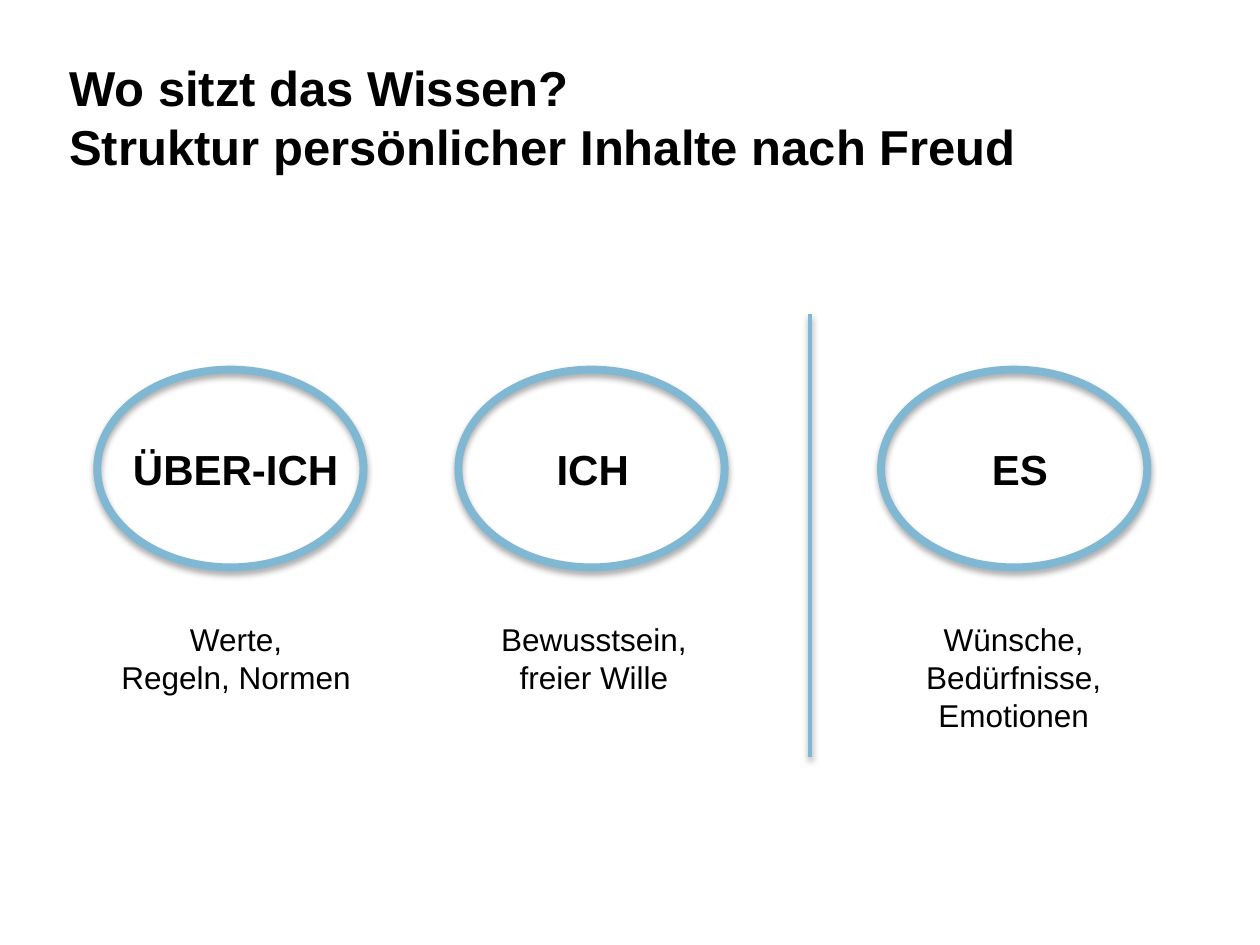
from dataclasses import dataclass

from lxml.etree import SubElement
from pptx import Presentation
from pptx.dml.color import RGBColor
from pptx.enum.shapes import MSO_CONNECTOR, MSO_SHAPE
from pptx.enum.text import MSO_ANCHOR, PP_ALIGN
from pptx.oxml.ns import qn
from pptx.util import Cm, Pt


@dataclass(frozen=True)
class Theme:
    font: str = "Arial"
    text: RGBColor = RGBColor(0x00, 0x00, 0x00)
    accent: RGBColor = RGBColor(0x80, 0xB7, 0xD2)
    title_size: Pt = Pt(28)
    label_size: Pt = Pt(24)
    caption_size: Pt = Pt(18)


theme = Theme()


def add_text(box, paragraphs, size, bold=False, alignment=PP_ALIGN.CENTER,
             anchor=MSO_ANCHOR.TOP, inset=0.18):
    """Add a text box at box (left, top, width, height in cm)."""
    frame = slide.shapes.add_textbox(*map(Cm, box)).text_frame
    frame.word_wrap = True
    frame.vertical_anchor = anchor
    frame.margin_left = frame.margin_right = Cm(inset)
    frame.margin_top = frame.margin_bottom = Cm(inset)
    frame.text = "\n".join(paragraphs)
    for paragraph in frame.paragraphs:
        paragraph.alignment = alignment
        paragraph.font.name = theme.font
        paragraph.font.size = size
        paragraph.font.bold = bold
        paragraph.font.color.rgb = theme.text


def add_shadow(shape, opacity):
    """Give the shape a soft black shadow falling straight down."""
    properties = shape._element.spPr
    effects = SubElement(properties, qn("a:effectLst"))
    shadow = SubElement(effects, qn("a:outerShdw"), blurRad=str(Pt(4)),
                        dist=str(Pt(2)), dir="5400000", rotWithShape="0")
    color = SubElement(shadow, qn("a:srgbClr"), val="000000")
    SubElement(color, qn("a:alpha"), val=str(opacity * 1000))


presentation = Presentation()
presentation.slide_width = Cm(25.4)
presentation.slide_height = Cm(19.05)
slide = presentation.slides.add_slide(presentation.slide_layouts[6])

add_text((1.27, 0.76, 20.27, 3.18),
         ["Wo sitzt das Wissen?\vStruktur persönlicher Inhalte nach Freud"],
         theme.title_size, bold=True, alignment=PP_ALIGN.LEFT,
         anchor=MSO_ANCHOR.MIDDLE, inset=0.13)

ring_top, ring_width, ring_height = 7.39, 5.49, 4.11
label_height = 1.4
label_top = ring_top + (ring_height - label_height) / 2
caption_top = 12.32

# Ring left, label, label centre, caption left, caption width, caption lines
instances = [
    (1.9, "ÜBER-ICH", 4.75, 0.81, 7.9, ["Werte,", "Regeln, Normen"]),
    (9.18, "ICH", 11.95, 8.89, 6.17, ["Bewusstsein,", "freier Wille"]),
    (17.7, "ES", 20.56, 17.35, 6.17, ["Wünsche, Bedürfnisse, Emotionen"]),
]
for ring_left, label, center, caption_left, caption_width, caption in instances:
    ring = slide.shapes.add_shape(MSO_SHAPE.DONUT, Cm(ring_left), Cm(ring_top),
                                  Cm(ring_width), Cm(ring_height))
    ring.adjustments[0] = 0.03
    ring.fill.solid()
    ring.fill.fore_color.rgb = theme.accent
    ring.line.color.rgb = theme.accent
    ring.line.width = Pt(1)
    add_shadow(ring, opacity=35)

    add_text((center - ring_width / 2, label_top, ring_width, label_height),
             [label], theme.label_size, bold=True, anchor=MSO_ANCHOR.MIDDLE)
    caption_height = 2.57 if len(caption) == 1 else 1.83
    add_text((caption_left, caption_top, caption_width, caption_height),
             caption, theme.caption_size)

divider = slide.shapes.add_connector(MSO_CONNECTOR.STRAIGHT, Cm(16.33), Cm(15.27),
                                     Cm(16.33), Cm(6.32))
divider.line.color.rgb = theme.accent
divider.line.width = Pt(2)
add_shadow(divider, opacity=38)

presentation.save("out.pptx")
